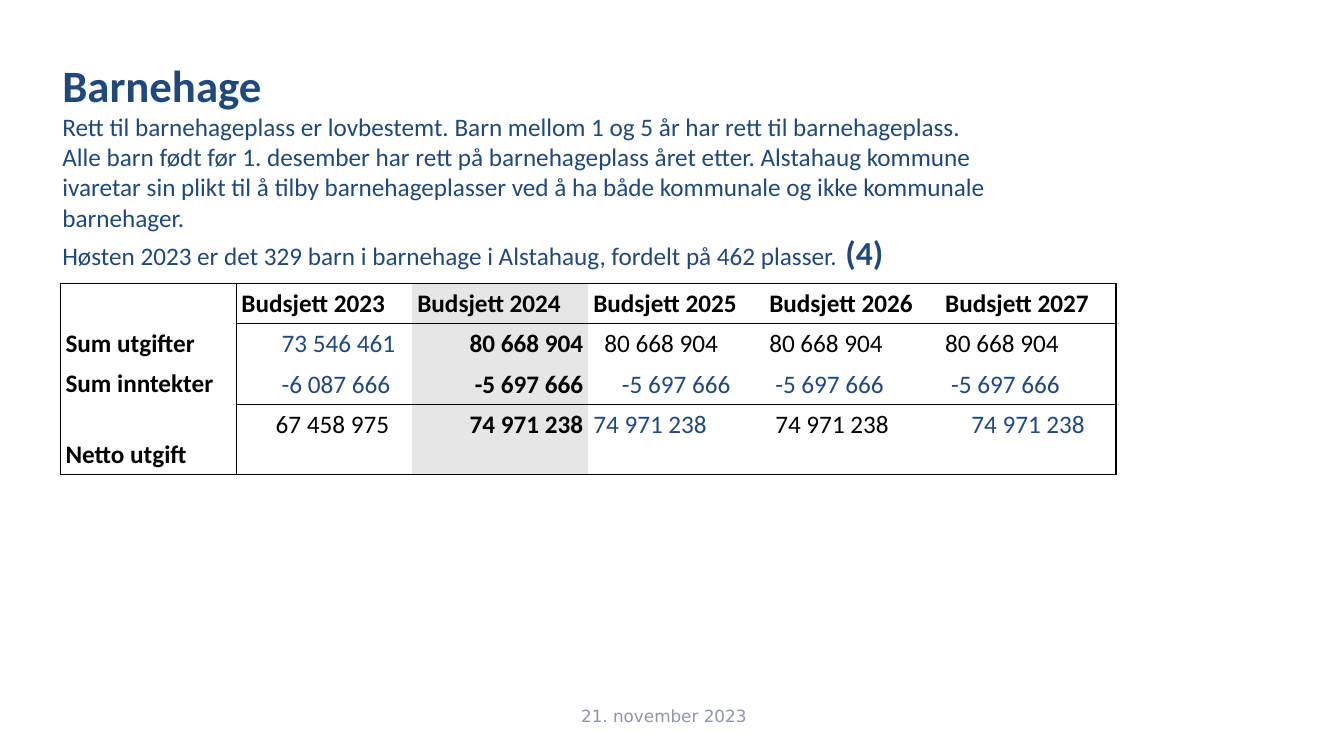
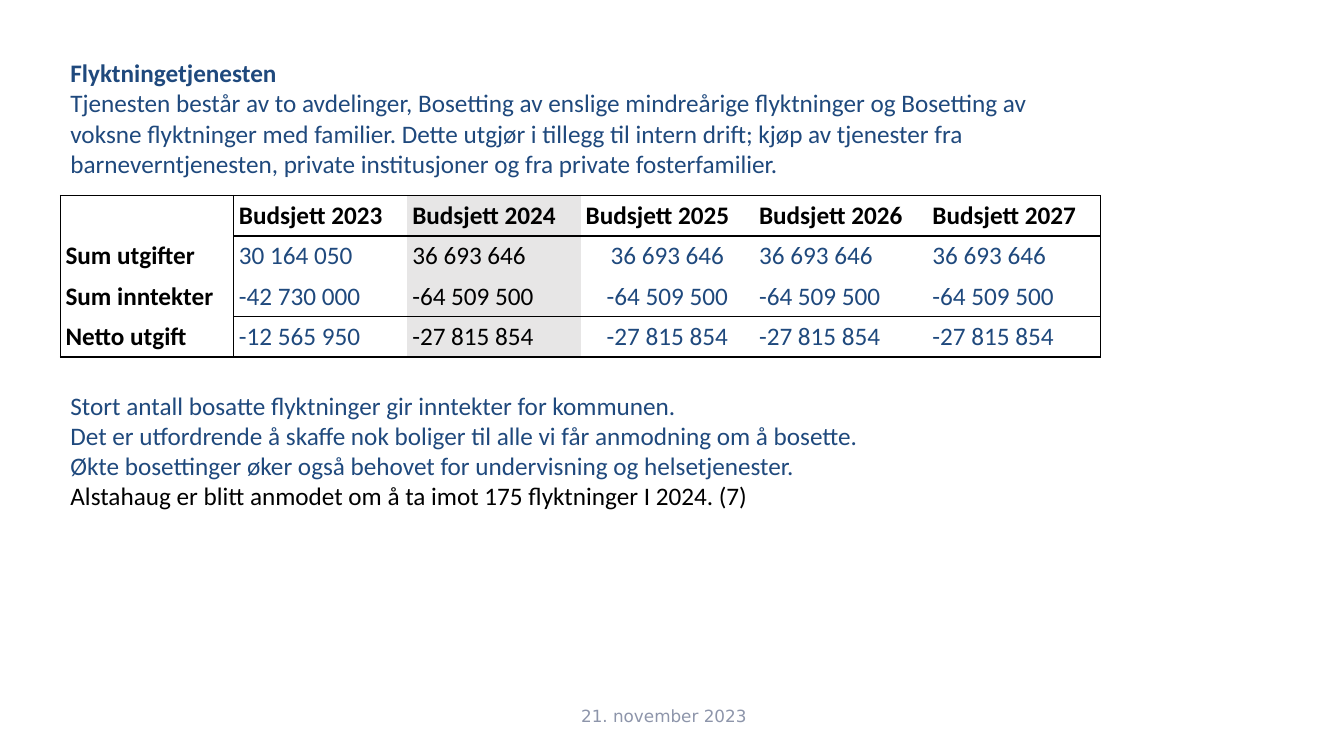
"""Build two budget slides for kindergartens and refugee services."""
import typing

import lxml.etree
import pptx
import pptx.dml.color
import pptx.enum.text
import pptx.oxml.ns
import pptx.util

Inches = pptx.util.Inches
RGBColor = pptx.dml.color.RGBColor
Align = pptx.enum.text.PP_ALIGN
Anchor = pptx.enum.text.MSO_ANCHOR

NAVY = RGBColor(0x1F, 0x49, 0x7D)
BLACK = RGBColor(0, 0, 0)
SHADE = RGBColor(0xE7, 0xE6, 0xE6)
FOOTER_GREY = RGBColor(0x8D, 0x95, 0xAA)
PADDING = 0.05
SHADED_COLUMN = 2
YEARS = range(2023, 2028)
ROW_LABELS = ("Sum utgifter", "Sum inntekter", "Netto utgift")


class Amount(typing.NamedTuple):
    text: str
    color: RGBColor = NAVY
    align: Align = Align.LEFT
    indent: float = 0
    bold: bool = False


def current_year(text):
    return Amount(text, BLACK, Align.RIGHT, bold=True)


def centred(text, indent=0.0):
    return Amount(text, NAVY, Align.CENTER, indent)


KINDERGARTEN_AMOUNTS = (
    (centred("73 546 461", 0.28), current_year("80 668 904"),
     Amount("80 668 904", BLACK, indent=0.11),
     Amount("80 668 904", BLACK), Amount("80 668 904", BLACK)),
    (centred("-6 087 666", 0.23), current_year("-5 697 666"),
     centred("-5 697 666"),
     Amount("-5 697 666", indent=0.06), Amount("-5 697 666", indent=0.06)),
    (Amount("67 458 975", BLACK, indent=0.34), current_year("74 971 238"),
     Amount("74 971 238"), Amount("74 971 238", BLACK, indent=0.06),
     centred("74 971 238")),
)


def refugee_row(previous, planned):
    return (Amount(previous), Amount(planned, BLACK), centred(planned),
            Amount(planned), Amount(planned))


REFUGEE_AMOUNTS = (
    refugee_row("30 164 050", "36 693 646"),
    refugee_row("-42 730 000", "-64 509 500"),
    refugee_row("-12 565 950", "-27 815 854"),
)


def write(paragraph, text, *, size=18, color=NAVY, bold=False,
          font="Calibri", align=Align.LEFT):
    paragraph.alignment = align
    run = paragraph.add_run()
    run.text = text
    run.font.size = pptx.util.Pt(size)
    run.font.name = font
    run.font.bold = bold
    run.font.color.rgb = color


def add_text(slide, left, top, width, height, paragraphs, anchor=Anchor.TOP):
    box = slide.shapes.add_textbox(
        Inches(left), Inches(top), Inches(width), Inches(height))
    frame = box.text_frame
    frame.word_wrap = True
    frame.vertical_anchor = anchor
    for index, runs in enumerate(paragraphs):
        paragraph = frame.add_paragraph() if index else frame.paragraphs[0]
        for text, style in runs:
            write(paragraph, text, **style)


def set_border(cell, side, visible):
    properties = cell._tc.get_or_add_tcPr()
    line = lxml.etree.SubElement(
        properties, pptx.oxml.ns.qn(f"a:ln{side}"),
        w=str(pptx.util.Pt(1) if visible else 0))
    if visible:
        fill = lxml.etree.SubElement(line, pptx.oxml.ns.qn("a:solidFill"))
        lxml.etree.SubElement(
            fill, pptx.oxml.ns.qn("a:srgbClr"), val=str(BLACK))
    else:
        lxml.etree.SubElement(line, pptx.oxml.ns.qn("a:noFill"))


def format_cell(cell, row, column, entry, anchor):
    vertical_rules = (0, 1, len(YEARS) + 1)
    horizontal_rules = (0, 4) if column == 0 else (0, 1, 3, 4)
    set_border(cell, "L", column in vertical_rules)
    set_border(cell, "R", column + 1 in vertical_rules)
    set_border(cell, "T", row in horizontal_rules)
    set_border(cell, "B", row + 1 in horizontal_rules)
    if column == SHADED_COLUMN:
        cell.fill.solid()
        cell.fill.fore_color.rgb = SHADE
    else:
        cell.fill.background()
    cell.margin_left = Inches(PADDING + entry.indent)
    cell.margin_right = cell.margin_top = cell.margin_bottom = Inches(PADDING)
    cell.vertical_anchor = anchor
    if entry.text:
        write(cell.text_frame.paragraphs[0], entry.text, color=entry.color,
              bold=entry.bold, align=entry.align)


def add_budget_table(slide, top, column_width, amounts, last_height=0.4):
    headings = [""] + [f"Budsjett {year}" for year in YEARS]
    rows = [[Amount(text, BLACK, bold=True) for text in headings]]
    for label, values in zip(ROW_LABELS, amounts):
        rows.append([Amount(label, BLACK, bold=True), *values])
    heights = (0.4, 0.4, 0.4, last_height)
    table = slide.shapes.add_table(
        len(rows), len(headings), Inches(0.6), Inches(top),
        Inches(column_width * len(headings)), Inches(sum(heights))).table
    table.first_row = table.horz_banding = False
    for column in table.columns:
        column.width = Inches(column_width)
    for row, (entries, height) in enumerate(zip(rows, heights)):
        table.rows[row].height = Inches(height)
        for column, entry in enumerate(entries):
            anchor = Anchor.TOP if row and column else Anchor.BOTTOM
            format_cell(table.cell(row, column), row, column, entry, anchor)


def add_slide(presentation):
    slide = presentation.slides.add_slide(presentation.slide_layouts[6])
    style = {"size": 12, "font": "DejaVu Sans", "color": FOOTER_GREY,
             "align": Align.CENTER}
    add_text(slide, 5.03, 6.9, 3.11, 0.4,
             [[("21. november 2023", style)]], Anchor.MIDDLE)
    return slide


def build_kindergarten(presentation):
    slide = add_slide(presentation)
    add_text(slide, 0.52, 0.52, 9.47, 2.26, [
        [("Barnehage", {"size": 32, "bold": True})],
        [("Rett til barnehageplass er lovbestemt. Barn mellom 1 og 5 år har "
          "rett til barnehageplass. Alle barn født før 1. desember har rett "
          "på barnehageplass året etter. Alstahaug kommune ivaretar sin plikt "
          "til å tilby barnehageplasser ved å ha både kommunale og ikke "
          "kommunale barnehager.", {})],
        [("Høsten 2023 er det 329 barn i barnehage i Alstahaug, fordelt på "
          "462 plasser.", {}), (" (4)", {"size": 24, "bold": True})],
    ])
    add_budget_table(slide, 2.81, 1.745, KINDERGARTEN_AMOUNTS, 0.7)


def build_refugees(presentation):
    slide = add_slide(presentation)
    add_text(slide, 0.6, 0.52, 9.84, 1.31, [
        [("Flyktningetjenesten", {"bold": True})],
        [("Tjenesten består av to avdelinger, Bosetting av enslige "
          "mindreårige flyktninger og Bosetting av voksne flyktninger med "
          "familier. Dette utgjør i tillegg til intern drift; kjøp av "
          "tjenester fra barneverntjenesten, private institusjoner og fra "
          "private fosterfamilier.", {})],
    ])
    add_budget_table(slide, 1.94, 1.72, REFUGEE_AMOUNTS)
    add_text(slide, 0.6, 3.82, 10.32, 1.31, [
        [("Stort antall bosatte flyktninger gir inntekter for kommunen.", {})],
        [("Det er utfordrende å skaffe nok boliger til alle vi får anmodning "
          "om å bosette.", {})],
        [("Økte bosettinger øker også behovet for undervisning og "
          "helsetjenester.", {})],
        [("Alstahaug er blitt anmodet om å ta imot 175 flyktninger I 2024. "
          "(7)", {"color": BLACK})],
    ])


def main():
    presentation = pptx.Presentation()
    presentation.slide_width = Inches(13.33)
    presentation.slide_height = Inches(7.5)
    build_kindergarten(presentation)
    build_refugees(presentation)
    presentation.save("out.pptx")


if __name__ == "__main__":
    main()
